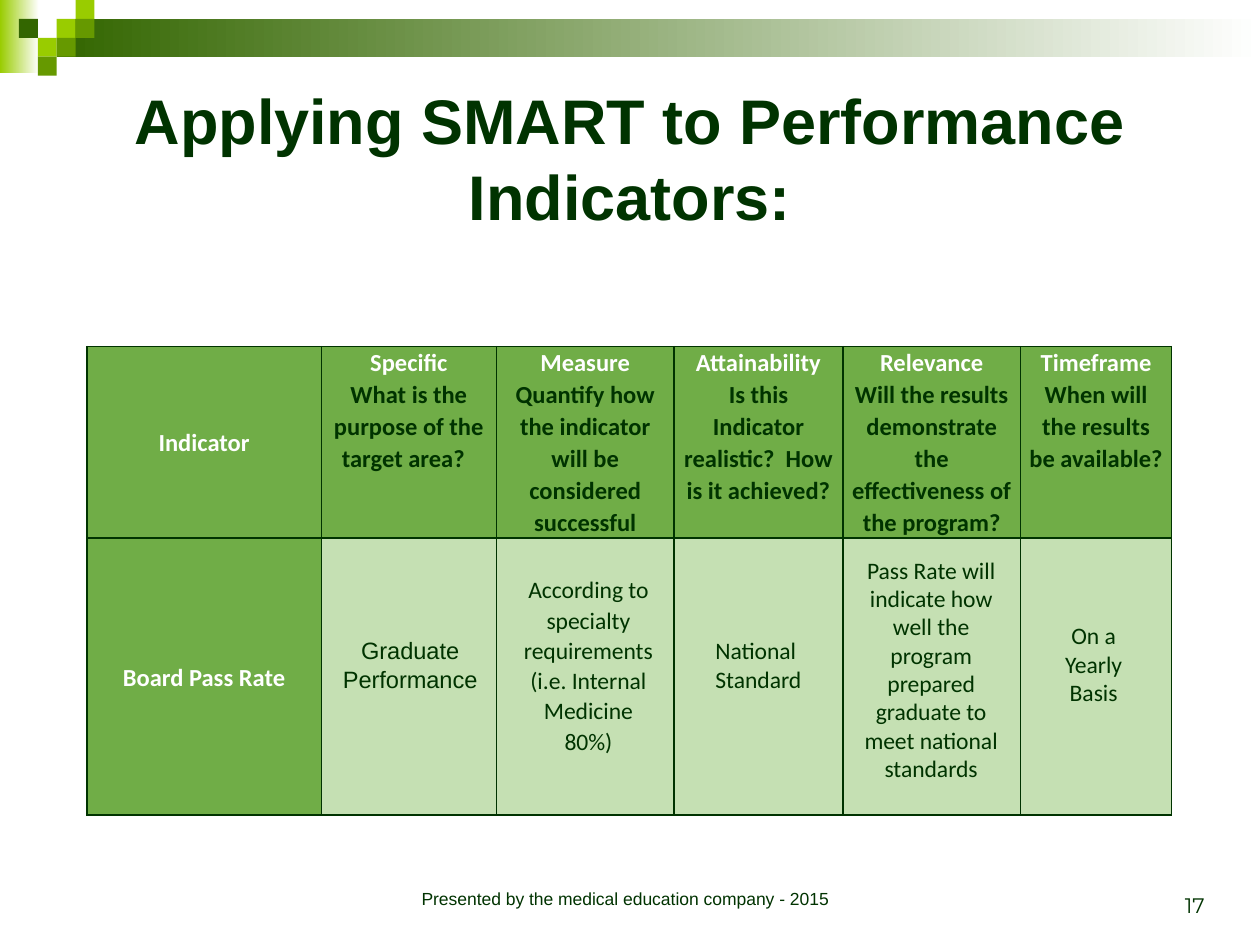
from lxml.etree import SubElement
from pptx import Presentation
from pptx.dml.color import RGBColor
from pptx.enum.shapes import MSO_SHAPE as Shape
from pptx.enum.text import MSO_ANCHOR as Anchor, PP_ALIGN as Align
from pptx.oxml.ns import qn
from pptx.util import Inches, Pt

INK = RGBColor(0x00, 0x33, 0x00)
WHITE = RGBColor(0xFF, 0xFF, 0xFF)
DARK = RGBColor(0x33, 0x66, 0x00)
MIDDLE = RGBColor(0x66, 0x99, 0x00)
LIME = RGBColor(0x99, 0xCC, 0x00)
HEADER_FILL = RGBColor(0x70, 0xAD, 0x47)
BODY_FILL = RGBColor(0xC5, 0xE0, 0xB3)

# Content
TITLE = "Applying SMART to Performance Indicators:"
HEADERS = [
    ("Indicator",),
    ("Specific", "What is the purpose of the target area?  "),
    ("Measure", "Quantify how the indicator will be considered successful"),
    ("Attainability", "Is this Indicator realistic?  How is it achieved?"),
    ("Relevance", "Will the results demonstrate the effectiveness of the program?"),
    ("Timeframe", "When will the results be available?"),
]
ROW_LABEL = "Board Pass Rate"
COLUMN_WIDTHS = [1.86, 1.39, 1.41, 1.34, 1.41, 1.2]
ROW_HEIGHTS = [1.52, 2.2]
TABLE_LEFT, TABLE_TOP = 0.69, 2.75

# Answers lying over the body row: paragraphs, box, font, alignment, line spacing
ANSWERS = [
    (["Graduate Performance"], (2.6, 5, 1.31, 0.56), "Arial", Align.CENTER, 1),
    (["According to specialty requirements", "(i.e. Internal Medicine 80%)"],
     (4.02, 4.5, 1.3, 1.79), "Calibri", Align.CENTER, 1.07),
    (["National Standard"], (5.58, 5, 0.9, 0.78), "Calibri", Align.LEFT, 1),
    (["Pass Rate will indicate how well the program prepared graduate "
      "to meet national standards"],
     (6.68, 4.36, 1.42, 1.92), "Calibri", Align.CENTER, 1),
    (["On a Yearly Basis"], (8.31, 4.88, 0.74, 1.01), "Calibri", Align.CENTER, 1),
]
FOOTER = "Presented by the medical education company - 2015"
PAGE_NUMBER = "17"

# Corner mosaic: column, row, colour on a grid of small squares
SQUARE = 0.15
MOSAIC = [(3, 1, LIME), (4, 0, LIME), (4, 1, MIDDLE), (2, 2, LIME),
          (1, 1, DARK), (3, 2, MIDDLE), (2, 3, MIDDLE)]
BANDS = [((0, 0, 0.31, 0.58), LIME), ((0.45, 0.15, 9.55, 0.3), DARK)]


def add_rectangle(slide, box):
    shape = slide.shapes.add_shape(Shape.RECTANGLE, *map(Inches, box))
    shape.shadow.inherit = False
    shape.line.fill.background()
    return shape


def style_paragraph(paragraph, size, font, color, align, spacing=1, bold=False):
    paragraph.alignment = align
    paragraph.line_spacing = spacing
    for run in paragraph.runs:
        run.font.size = Pt(size)
        run.font.name = font
        run.font.bold = bold
        run.font.color.rgb = color


def add_text(slide, lines, box, size, font, align, spacing=1, anchor=Anchor.TOP):
    frame = slide.shapes.add_textbox(*map(Inches, box)).text_frame
    frame.word_wrap = True
    frame.vertical_anchor = anchor
    frame.text = "\n".join(lines)
    for paragraph in frame.paragraphs:
        style_paragraph(paragraph, size, font, INK, align, spacing)


def style_cell(cell, fill):
    properties = cell._tc.get_or_add_tcPr()
    for side in ("a:lnL", "a:lnR", "a:lnT", "a:lnB"):
        line = SubElement(properties, qn(side), w=str(Pt(1)))
        solid = SubElement(line, qn("a:solidFill"))
        SubElement(solid, qn("a:srgbClr"), val=str(INK))
    cell.fill.solid()
    cell.fill.fore_color.rgb = fill
    cell.margin_left = cell.margin_right = Inches(0.06)
    cell.margin_top = cell.margin_bottom = 0


def fill_label(cell, lines):
    cell.text = "\n".join(lines)
    for index, paragraph in enumerate(cell.text_frame.paragraphs):
        color = INK if index else WHITE
        style_paragraph(paragraph, 14, "Calibri", color, Align.CENTER, 1.07, True)


def add_indicator_table(slide):
    table = slide.shapes.add_table(
        len(ROW_HEIGHTS), len(COLUMN_WIDTHS), Inches(TABLE_LEFT), Inches(TABLE_TOP),
        Inches(sum(COLUMN_WIDTHS)), Inches(sum(ROW_HEIGHTS))).table
    for column, width in zip(table.columns, COLUMN_WIDTHS):
        column.width = Inches(width)
    for row, height in zip(table.rows, ROW_HEIGHTS):
        row.height = Inches(height)
    for index, lines in enumerate(HEADERS):
        style_cell(table.cell(0, index), HEADER_FILL)
        style_cell(table.cell(1, index), BODY_FILL if index else HEADER_FILL)
        fill_label(table.cell(0, index), lines)
    fill_label(table.cell(1, 0), [ROW_LABEL])
    for row in range(2):
        table.cell(row, 0).vertical_anchor = Anchor.MIDDLE


def main():
    presentation = Presentation()
    presentation.slide_width, presentation.slide_height = Inches(10), Inches(7.5)
    slide = presentation.slides.add_slide(presentation.slide_layouts[5])

    # Gradient bands and corner mosaic
    for box, color in BANDS:
        fill = add_rectangle(slide, box).fill
        fill.gradient()
        fill.gradient_angle = 0
        for stop, position, stop_color in zip(fill.gradient_stops, (0, 1), (color, WHITE)):
            stop.position = position
            stop.color.rgb = stop_color
    for column, row, color in MOSAIC:
        fill = add_rectangle(
            slide, (column * SQUARE, row * SQUARE, SQUARE, SQUARE)).fill
        fill.solid()
        fill.fore_color.rgb = color

    # Title
    title = slide.shapes.title
    title.left, title.top, title.width, title.height = map(Inches, (0.5, 0.5, 9, 1.5))
    title.text_frame.text = TITLE
    title.text_frame.vertical_anchor = Anchor.MIDDLE
    style_paragraph(title.text_frame.paragraphs[0], 36, "Arial", INK,
                    Align.CENTER, bold=True)

    # Table and the answers over it
    add_indicator_table(slide)
    for lines, box, font, align, spacing in ANSWERS:
        add_text(slide, lines, box, 13.5, font, align, spacing)

    # Footer and page number
    add_text(slide, [FOOTER], (2.75, 7, 4.42, 0.33), 10, "Arial", Align.CENTER)
    add_text(slide, [PAGE_NUMBER], (7.33, 6.83, 2.33, 0.5), 12, "Montserrat",
             Align.RIGHT, anchor=Anchor.BOTTOM)

    presentation.save("out.pptx")


if __name__ == "__main__":
    main()
